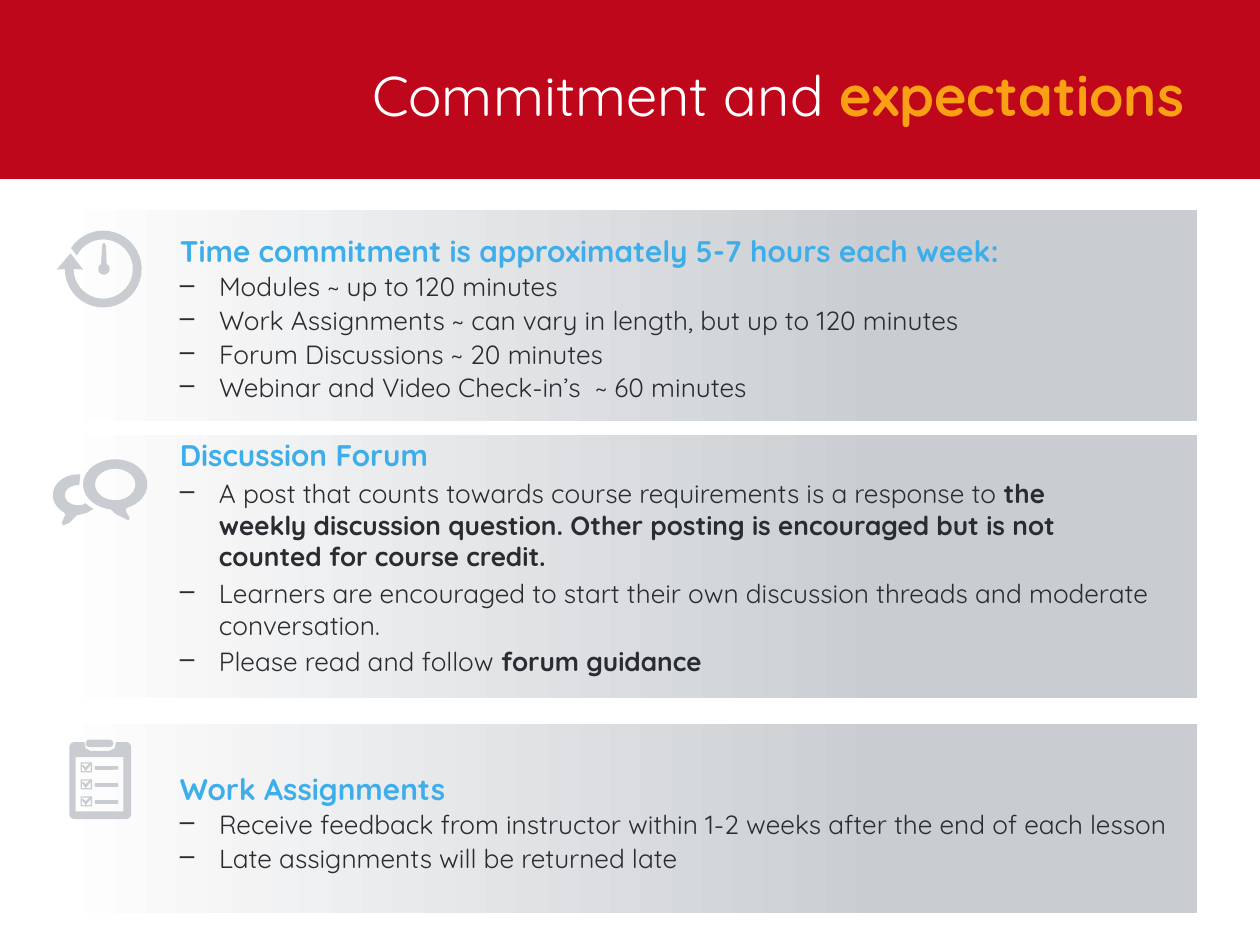
from math import cos, radians, sin

from lxml.etree import SubElement
from pptx import Presentation
from pptx.dml.color import RGBColor
from pptx.enum.shapes import MSO_SHAPE
from pptx.enum.text import MSO_ANCHOR, PP_ALIGN
from pptx.oxml.ns import qn
from pptx.util import Inches, Pt

FONT = "Quicksand"
COLORS = {
    "header": "BF071C", "white": "FFFFFF", "accent": "FAA014",
    "heading": "3DAEEA", "body": "292C30", "gray": "C9CDD1",
}
TITLE = [("Commitment and ", "white", False), ("expectations", "accent", True)]
SECTIONS = [
    {
        "band": (1.67, 1.67), "text": (1.75, 8.08, 1.58),
        "spacing": 0.9, "bottom_inset": 0.05,
        "heading": "Time commitment is approximately 5-7 hours each week:",
        "points": [
            [("Modules ~ up to 120 minutes", False)],
            [("Work Assignments ~ can vary in length, but up to 120 minutes", False)],
            [("Forum Discussions ~ 20 minutes", False)],
            [("Webinar and Video Check-in’s  ~ 60 minutes", False)],
        ],
    },
    {
        "band": (3.45, 2.09), "text": (3.54, 8.17, 2),
        "spacing": 1.0, "bottom_inset": 0.29,
        "heading": "Discussion Forum",
        "points": [
            [("A post that counts towards course requirements is a response to ", False),
             ("the \nweekly discussion question. Other posting is encouraged but is not \n"
              "counted for course credit.", True)],
            [("Learners are encouraged to start their own discussion threads and "
              "moderate conversation.", False)],
            [("Please read and follow ", False), ("forum guidance", True)],
        ],
    },
    {
        "band": (5.75, 1.5), "text": (5.83, 8.08, 1.42),
        "spacing": 0.9, "bottom_inset": 0.05,
        "heading": "Work Assignments",
        "points": [
            [("Receive feedback from instructor within 1-2 weeks after the end of "
              "each lesson", False)],
            [("Late assignments will be returned late", False)],
        ],
    },
]


def rgb(name):
    return RGBColor.from_string(COLORS[name])


def add_preset(slide, preset, left, top, width, height, color):
    shape = slide.shapes.add_shape(
        preset, Inches(left), Inches(top), Inches(width), Inches(height))
    shape.shadow.inherit = False
    shape.line.fill.background()
    shape.fill.solid()
    shape.fill.fore_color.rgb = rgb(color)
    return shape


def add_outline(slide, *contours):
    first, *others = [[(Inches(x), Inches(y)) for x, y in c] for c in contours]
    builder = slide.shapes.build_freeform(*first[0])
    builder.add_line_segments(first[1:])
    for contour in others:
        builder.move_to(*contour[0])
        builder.add_line_segments(contour[1:])
    shape = builder.convert_to_shape()
    shape.shadow.inherit = False
    shape.fill.solid()
    shape.fill.fore_color.rgb = rgb("gray")
    shape.line.fill.background()


def arc(cx, cy, rx, ry, start, end, steps=36):
    angles = [radians(start + (end - start) * i / steps) for i in range(steps + 1)]
    return [(cx + rx * cos(a), cy + ry * sin(a)) for a in angles]


def box(left, top, right, bottom):
    return [(left, top), (right, top), (right, bottom), (left, bottom)]


def add_text(slide, left, top, width, height):
    frame = slide.shapes.add_textbox(
        Inches(left), Inches(top), Inches(width), Inches(height)).text_frame
    frame.word_wrap = True
    frame.vertical_anchor = MSO_ANCHOR.MIDDLE
    return frame


def add_run(paragraph, text, size, color, bold):
    for number, line in enumerate(text.split("\n")):
        if number:
            paragraph.add_line_break()
        run = paragraph.add_run()
        run.text = line
        run.font.name = FONT
        run.font.size = Pt(size)
        run.font.bold = bold
        run.font.color.rgb = rgb(color)


def add_band(slide, top, height):
    fill = add_preset(slide, MSO_SHAPE.RECTANGLE, 0.42, top, 9.08, height, "gray").fill
    fill.gradient()
    fill.gradient_angle = 0
    for stop, position, color in zip(fill.gradient_stops, (0, 0.73), ("white", "gray")):
        stop.position = position
        stop.color.rgb = rgb(color)


def add_section(slide, section):
    top, width, height = section["text"]
    frame = add_text(slide, 1.33, top, width, height)
    frame.margin_bottom = Inches(section["bottom_inset"])
    heading = frame.paragraphs[0]
    heading.line_spacing = section["spacing"]
    heading.space_before = Pt(3.4)
    add_run(heading, section["heading"], 17, "heading", True)
    for point in section["points"]:
        paragraph = frame.add_paragraph()
        paragraph.level = 1
        paragraph.line_spacing = section["spacing"]
        paragraph.space_before = Pt(3)
        properties = paragraph._p.get_or_add_pPr()
        properties.set("marL", str(Inches(0.31)))
        properties.set("indent", str(Inches(-0.31)))
        SubElement(properties, qn("a:buChar")).set("char", "–")
        for text, bold in point:
            add_run(paragraph, text, 15, "body", bold)


def add_clock(slide):
    cx, cy = 0.82, 2.135
    arrow = [(0.45, 2.14), (0.56, 2.01), (0.66, 2.14)]
    add_outline(slide, arc(cx, cy, 0.305, 0.305, -147, 180) + arrow
                + arc(cx, cy, 0.235, 0.235, 180, -153))
    add_outline(slide, arc(0.825, cy, 0.045, 0.045, -60, 240)
                + [(0.81, 1.95), (0.82, 1.93), (0.83, 1.93), (0.84, 1.95)])


def add_bubbles(slide):
    cx, cy = 0.915, 3.845
    add_outline(
        slide,
        arc(cx, cy, 0.255, 0.2, 98, 430)
        + [(1, 4.06), (1.03, 4.11), (1.02, 4.13), (0.92, 4.08)],
        arc(cx, cy, 0.16, 0.125, 0, 360))
    add_outline(
        slide,
        arc(0.62, 3.93, 0.2, 0.165, 275, 125)
        + [(0.52, 4.08), (0.49, 4.15), (0.5, 4.17), (0.55, 4.15), (0.61, 4.09),
           (0.69, 4.07), (0.74, 4.04), (0.67, 3.99)]
        + arc(0.62, 3.93, 0.105, 0.08, 60, 275))


def add_clipboard(slide):
    left, top, right, bottom, r = 0.55, 5.89, 1.04, 6.5, 0.04
    notch = [(0.67, top), (0.68, 5.94), (0.72, 5.96),
             (0.86, 5.96), (0.91, 5.94), (0.92, top)]
    board = (notch + arc(right - r, top + r, r, r, -90, 0, 6)
             + arc(right - r, bottom - r, r, r, 0, 90, 6)
             + arc(left + r, bottom - r, r, r, 90, 180, 6)
             + arc(left + r, top + r, r, r, 180, 270, 6))
    add_outline(slide, board, box(0.6, 6.01, 0.98, 6.44))
    clip = add_preset(slide, MSO_SHAPE.ROUNDED_RECTANGLE, 0.68, 5.87, 0.22, 0.06, "gray")
    clip.adjustments[0] = 0.5
    for row in range(3):
        y = 6.05 + 0.135 * row
        add_outline(slide, box(0.64, y, 0.73, y + 0.08),
                    box(0.65, y + 0.01, 0.72, y + 0.07))
        add_outline(slide, [(0.65, y + 0.03), (0.66, y + 0.02), (0.68, y + 0.04),
                            (0.72, y), (0.73, y + 0.01), (0.68, y + 0.07)])
        rule = add_preset(
            slide, MSO_SHAPE.ROUNDED_RECTANGLE, 0.75, y + 0.03, 0.19, 0.03, "gray")
        rule.adjustments[0] = 0.4


def main():
    deck = Presentation()
    deck.slide_width, deck.slide_height = Inches(10), Inches(7.5)
    slide = deck.slides.add_slide(deck.slide_layouts[6])
    for section in SECTIONS:
        add_band(slide, *section["band"])
        add_section(slide, section)
    add_preset(slide, MSO_SHAPE.RECTANGLE, 0, 0, 10, 1.42, "header")
    title = add_text(slide, 0.5, 0.25, 9, 1).paragraphs[0]
    title.alignment = PP_ALIGN.RIGHT
    for text, color, bold in TITLE:
        add_run(title, text, 32, color, bold)
    for add_icon in (add_clock, add_bubbles, add_clipboard):
        add_icon(slide)
    deck.save("out.pptx")


if __name__ == "__main__":
    main()
